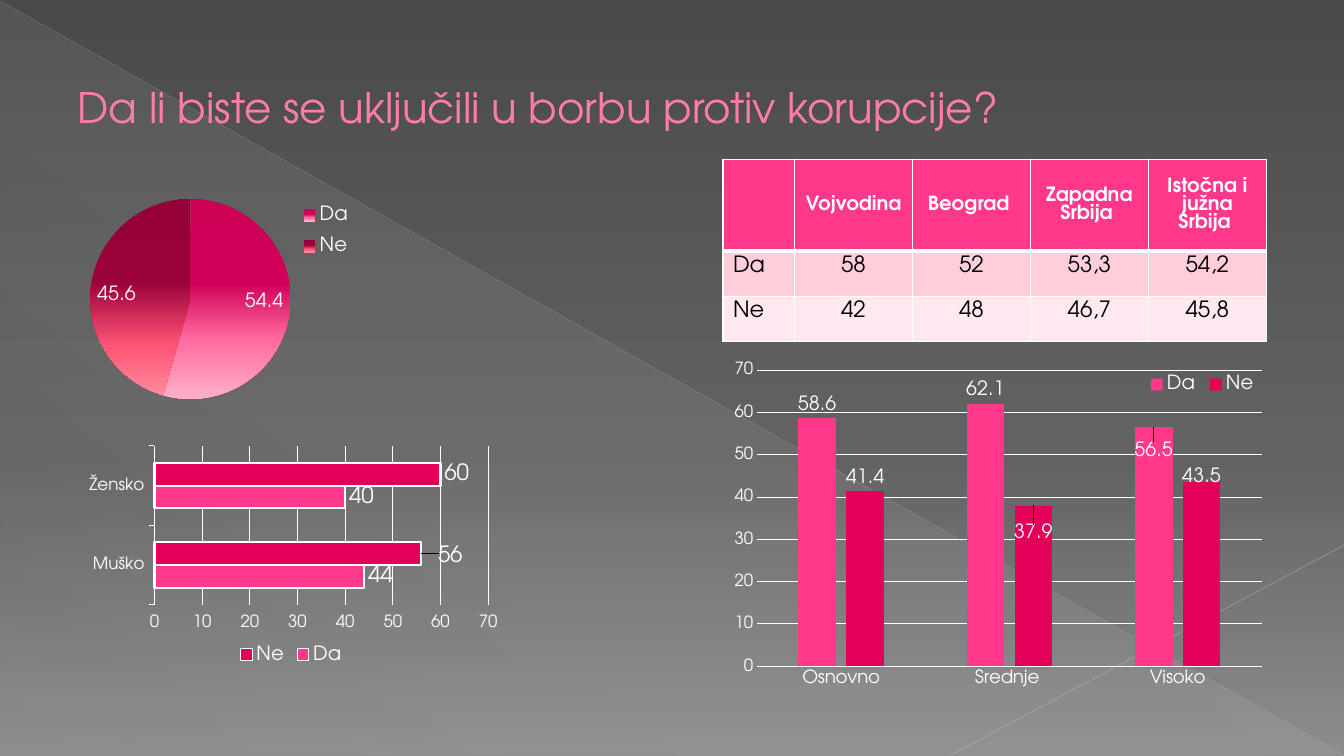
from pptx import Presentation
from pptx.chart.data import CategoryChartData
from pptx.dml.color import RGBColor
from pptx.enum.chart import XL_CHART_TYPE, XL_LABEL_POSITION, XL_LEGEND_POSITION, XL_TICK_MARK
from pptx.enum.shapes import MSO_CONNECTOR, MSO_SHAPE
from pptx.enum.text import MSO_ANCHOR, PP_ALIGN
from pptx.oxml import parse_xml
from pptx.oxml.ns import nsdecls, qn
from pptx.util import Inches, Pt

FONT = "TeX Gyre Adventor"
WHITE = RGBColor(0xFF, 0xFF, 0xFF)
BLACK = RGBColor(0, 0, 0)
TITLE_PINK = RGBColor(0xFF, 0x7D, 0xA7)
TITLE_EDGE = RGBColor(0xB1, 0x27, 0x61)
PINK = RGBColor(0xFF, 0x38, 0x8C)
CRIMSON = RGBColor(0xE4, 0x00, 0x59)
ROW_TINTS = (RGBColor(0xFF, 0xCE, 0xDA), RGBColor(0xFF, 0xE8, 0xEE))
LINE_GRAY = RGBColor(0xBF, 0xBF, 0xBF)
LINE_LIGHT = RGBColor(0xC6, 0xC6, 0xC6)

BACKDROP = [(0, "4A4A4A", 100), (60, "626262", 100), (100, "8C8C8C", 100)]
SHEEN = [(0, "D2D2D2", 10), (70, "D2D2D2", 8), (100, "D2D2D2", 1)]
PIE_SHADES = (
    [(0, "CC0055", 100), (42, "D0005A", 100), (70, "FF6A9E", 100), (100, "FFB0C8", 100)],
    [(0, "960038", 100), (42, "9A003A", 100), (75, "FF5577", 100), (100, "FF8A9A", 100)],
)


def set_gradient(fill, holder, stops, angle, index=0):
    """Give fill, the index-th gradient inside holder, its own stops."""
    fill.gradient()
    stop_xml = "".join(
        f'<a:gs pos="{pos * 1000}"><a:srgbClr val="{color}">'
        f'<a:alpha val="{alpha * 1000}"/></a:srgbClr></a:gs>'
        for pos, color, alpha in stops)
    old = list(holder.iter(qn("a:gradFill")))[index]
    old.getparent().replace(old, parse_xml(
        f'<a:gradFill {nsdecls("a")} rotWithShape="1"><a:gsLst>{stop_xml}</a:gsLst>'
        f'<a:lin ang="{angle * 60000}" scaled="0"/></a:gradFill>'))


def line_xml(tag, color, width):
    return parse_xml(
        f'<a:{tag} {nsdecls("a")} w="{int(Pt(width))}"><a:solidFill>'
        f'<a:srgbClr val="{color}"/></a:solidFill></a:{tag}>')


def style_font(font, size, color=WHITE, bold=False):
    font.name, font.size, font.bold = FONT, Pt(size), bold
    font.color.rgb = color


def write(frame, text, size, color=WHITE, bold=False, align=PP_ALIGN.LEFT):
    paragraph = frame.paragraphs[0]
    paragraph.alignment = align
    run = paragraph.add_run()
    run.text = text
    style_font(run.font, size, color, bold)
    return run


def add_thin_line(slide, start, end, color, width, alpha):
    line = slide.shapes.add_connector(
        MSO_CONNECTOR.STRAIGHT, *(Inches(v) for v in start + end))
    line.line.color.rgb = color
    line.line.width = Pt(width)
    properties = line.element.spPr
    next(properties.iter(qn("a:srgbClr"))).append(
        parse_xml(f'<a:alpha {nsdecls("a")} val="{alpha * 1000}"/>'))
    properties.append(parse_xml(f'<a:effectLst {nsdecls("a")}/>'))
    return line


def add_backdrop(slide, width, height):
    set_gradient(slide.background.fill, slide.element, BACKDROP, 90)
    sheen = slide.shapes.add_shape(
        MSO_SHAPE.RIGHT_TRIANGLE, 0, Inches(0.02), Inches(width), Inches(height - 0.02))
    sheen.shadow.inherit = False
    sheen.line.fill.background()
    set_gradient(sheen.fill, sheen.element, SHEEN, 133)
    diagonal = add_thin_line(slide, (0, 0.01), (width, height - 0.01), LINE_GRAY, 0.39, 35)
    corner = add_thin_line(slide, (width, 5.41), (9.43, height - 0.01), LINE_LIGHT, 0.47, 45)
    for part in (sheen, diagonal, corner):
        slide.shapes.title.element.addprevious(part.element)


def fill_title(slide, box, text):
    title = slide.shapes.title
    title.left, title.top, title.width, title.height = (Inches(v) for v in box)
    title.text_frame.vertical_anchor = MSO_ANCHOR.MIDDLE
    title.text_frame.word_wrap = True
    run = write(title.text_frame, text, 30, TITLE_PINK)
    run.font._element.insert(0, line_xml("ln", TITLE_EDGE, 0.5))


def layout_xml(x, y, w=None, h=None, inner=False):
    """Manual layout; without w and h it is an offset from the default place."""
    values = [("x", x), ("y", y)]
    modes = ""
    if w is not None:
        modes = '<c:xMode val="edge"/><c:yMode val="edge"/>'
        values += [("w", w), ("h", h)]
    target = '<c:layoutTarget val="inner"/>' if inner else ""
    sizes = "".join(f'<c:{name} val="{value}"/>' for name, value in values)
    return parse_xml(f'<c:layout {nsdecls("c")}><c:manualLayout>{target}{modes}{sizes}'
                     f'</c:manualLayout></c:layout>')


def no_leader_lines_xml():
    return parse_xml(
        f'<c:extLst {nsdecls("c")}><c:ext uri="{{CE6537A1-D6FC-4f65-9D91-7224C49458BB}}" '
        'xmlns:c15="http://schemas.microsoft.com/office/drawing/2012/chart">'
        '<c15:showLeaderLines val="0"/></c:ext></c:extLst>')


def add_chart(slide, kind, box, categories, series, plot, legend_at, legend_box=None):
    data = CategoryChartData()
    data.categories = categories
    for name, values in series:
        data.add_series(name, values)
    chart = slide.shapes.add_chart(kind, *(Inches(v) for v in box), data).chart
    chart.has_title = False
    style_font(chart.font, 10)
    area = chart.element.chart.plotArea
    for old in area.findall(qn("c:layout")):
        area.remove(old)
    area.insert(0, layout_xml(*plot, inner=True))
    chart.has_legend = True
    chart.legend.position = legend_at
    chart.legend.include_in_layout = False
    style_font(chart.legend.font, 14)
    if legend_box:
        legend = chart.element.chart.find(qn("c:legend"))
        for old in legend.findall(qn("c:layout")):
            legend.remove(old)
        legend.find(qn("c:legendPos")).addnext(layout_xml(*legend_box))
    return chart


def show_values(labels, size, position):
    labels.show_value = True
    labels.position = position
    style_font(labels.font, size)


def add_answer_bars(slide, kind, box, categories, series, *, plot, gap, overlap, tick,
                    category_size, label_size, moved, outline=None, legend_box=None):
    """Clustered chart; moved maps (series, point) to a label offset."""
    chart = add_chart(slide, kind, box, categories, series, plot,
                      XL_LEGEND_POSITION.BOTTOM, legend_box)
    bars = chart.plots[0]
    bars.gap_width, bars.overlap, bars.vary_by_categories = gap, overlap, False
    for answer, color in zip(bars.series, (PINK, CRIMSON)):
        answer.format.fill.solid()
        answer.format.fill.fore_color.rgb = color
        if outline:
            answer.format.line.color.rgb = WHITE
            answer.format.line.width = Pt(outline)
        show_values(answer.data_labels, label_size, XL_LABEL_POSITION.OUTSIDE_END)
    for (answer, point), offset in moved.items():
        label = bars.series[answer].points[point].data_label
        style_font(label.font, label_size)
        label.position = XL_LABEL_POSITION.OUTSIDE_END
        mark = list(chart.element.iter(qn("c:ser")))[answer].xpath(
            f'.//c:dLbl/c:idx[@val="{point}"]')[0]
        mark.addnext(layout_xml(*offset))
    for labels in chart.element.iter(qn("c:dLbls")):
        labels.append(no_leader_lines_xml())
    for axis, size in ((chart.category_axis, category_size), (chart.value_axis, 12)):
        axis.major_tick_mark = tick
        axis.minor_tick_mark = XL_TICK_MARK.NONE
        style_font(axis.tick_labels.font, size)
    scale = chart.value_axis
    scale.minimum_scale, scale.maximum_scale, scale.major_unit = 0, 70, 10
    scale.format.line.fill.background()
    scale.has_major_gridlines = True
    for line in (scale.major_gridlines.format.line, chart.category_axis.format.line):
        line.color.rgb = WHITE
        line.width = Pt(0.75)


def add_total_pie(slide, box):
    chart = add_chart(slide, XL_CHART_TYPE.PIE, box, ["Da", "Ne"],
                      [("Series 1", (54.4, 45.6))], (0.05, 0.08, 0.68, 0.84),
                      XL_LEGEND_POSITION.RIGHT, (0.75, 0.06, 0.2, 0.31))
    pie = chart.plots[0]
    pie.vary_by_categories = True
    for index, shades in enumerate(PIE_SHADES):
        set_gradient(pie.series[0].points[index].format.fill, chart.element, shades, 90, index)
    show_values(pie.series[0].data_labels, 14, XL_LABEL_POSITION.INSIDE_END)


def add_region_table(slide, box, rows):
    table = slide.shapes.add_table(
        len(rows), len(rows[0]), *(Inches(v) for v in box)).table
    for index, column in enumerate(table.columns):
        column.width = Inches(1.17 if index else 0.71)
    for r, texts in enumerate(rows):
        table.rows[r].height = Inches(0.45 if r else 0.91)
        for c, text in enumerate(texts):
            cell = table.cell(r, c)
            cell.fill.solid()
            cell.fill.fore_color.rgb = ROW_TINTS[r - 1] if r else PINK
            cell.vertical_anchor = MSO_ANCHOR.TOP if r else MSO_ANCHOR.MIDDLE
            if text:
                write(cell.text_frame, text, 16 if r else 14, BLACK if r else WHITE,
                      bold=r == 0, align=PP_ALIGN.CENTER if c else PP_ALIGN.LEFT)
            widths = {"lnL": 1, "lnR": 1, "lnT": 3 if r == 1 else 1, "lnB": 1 if r else 3}
            for place, (side, width) in enumerate(widths.items()):
                cell._tc.get_or_add_tcPr().insert(place, line_xml(side, WHITE, width))


def main():
    deck = Presentation()
    deck.slide_width, deck.slide_height = Inches(13.33), Inches(7.5)
    slide = deck.slides.add_slide(deck.slide_layouts[5])
    add_backdrop(slide, 13.33, 7.5)
    fill_title(slide, (0.67, 0.29, 12, 1.53),
               "Da li biste se uključili u borbu protiv korupcije?")
    add_answer_bars(
        slide, XL_CHART_TYPE.BAR_CLUSTERED, (0.82, 4.38, 4.19, 2.25), ["Muško", "Žensko"],
        [("Da ", (44, 40)), ("Ne", (56, 60))], plot=(0.17, 0.02, 0.79, 0.7),
        gap=150, overlap=0, tick=XL_TICK_MARK.OUTSIDE, category_size=12, label_size=16,
        moved={(1, 0): (0.03, 0.01)}, outline=1.5)
    add_answer_bars(
        slide, XL_CHART_TYPE.COLUMN_CLUSTERED, (6.89, 3.02, 5.63, 4.08),
        ["Osnovno", "Srednje ", "Visoko"],
        [("Da", (58.6, 62.1, 56.5)), ("Ne", (41.4, 37.9, 43.5))],
        plot=(0.11, 0.16, 0.89, 0.72), gap=219, overlap=-27, tick=XL_TICK_MARK.NONE,
        category_size=13, label_size=14, legend_box=(0.79, 0.16, 0.21, 0.07),
        moved={(0, 2): (0, 0.09), (1, 1): (0, 0.1), (1, 2): (0, 0.02)})
    add_region_table(slide, (7.17, 1.58, 5.39, 1.81), [
        ("", "Vojvodina", "Beograd ", "Zapadna Srbija ", "Istočna i južna Srbija "),
        ("Da", "58", "52", "53,3", "54,2"),
        ("Ne", "42", "48", "46,7", "45,8")])
    add_total_pie(slide, (0.75, 1.78, 2.92, 2.37))
    deck.save("out.pptx")


if __name__ == "__main__":
    main()
